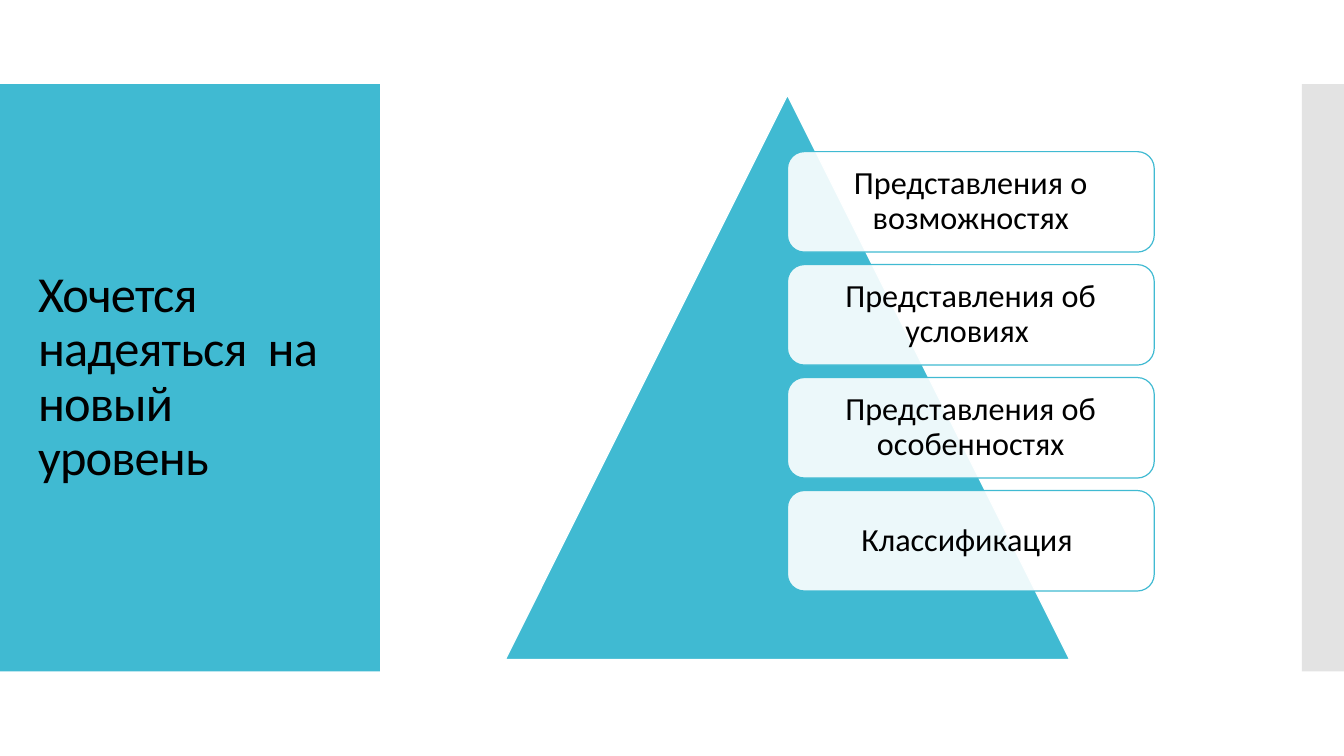
import pptx
import pptx.dml.color
import pptx.enum.shapes
import pptx.enum.text
import pptx.oxml.ns
import pptx.util
from lxml import etree

Pt = pptx.util.Pt
SHAPES = pptx.enum.shapes.MSO_SHAPE
TEAL, WHITE, GRAY, BLACK = "40BAD2", "FFFFFF", "C8C8C8", "000000"
IDEAS = [
    "Представления о возможностях",
    "Представления об условиях ",
    "Представления об особенностях",
    "Классификация ",
]


def color(hex_value):
    """Turn a hex string into a colour."""
    return pptx.dml.color.RGBColor.from_string(hex_value)


def add_block(slide, preset, box, fill, line=None, opacity=100):
    """Add a flat preset shape in a box given as left, top, width, height."""
    block = slide.shapes.add_shape(preset, *map(Pt, box))
    block.shadow.inherit = False
    block.fill.solid()
    block.fill.fore_color.rgb = color(fill)
    if opacity < 100:
        tint = block.element.spPr.find(".//" + pptx.oxml.ns.qn("a:srgbClr"))
        etree.SubElement(tint, pptx.oxml.ns.qn("a:alpha"), val=str(opacity * 1000))
    if line:
        block.line.color.rgb = color(line)
        block.line.width = Pt(0.85)
    else:
        block.line.fill.background()
    return block


def write(shape, text, size, align):
    """Set one vertically centred paragraph and return it."""
    frame = shape.text_frame
    frame.text = text
    frame.word_wrap = True
    frame.auto_size = pptx.enum.text.MSO_AUTO_SIZE.NONE
    frame.vertical_anchor = pptx.enum.text.MSO_ANCHOR.MIDDLE
    paragraph = frame.paragraphs[0]
    paragraph.alignment = align
    paragraph.line_spacing = 0.9
    paragraph.font.name = "Calibri"
    paragraph.font.size = Pt(size)
    paragraph.font.color.rgb = color(BLACK)
    return paragraph


def add_title_panel(slide, box):
    """Place the title on a coloured panel."""
    left, top, width, height = box
    title = slide.shapes.title
    panel = add_block(slide, SHAPES.RECTANGLE, box, TEAL)
    title.element.addprevious(panel.element)
    title.left, title.top = Pt(left + 20), Pt(top + 28.8)
    title.width, title.height = Pt(width - 39.6), Pt(height - 57.6)
    heading = write(title, "Хочется надеяться  на новый  уровень", 36,
                    pptx.enum.text.PP_ALIGN.LEFT)
    heading.runs[0].font._element.set("spc", "-60")


def add_pyramid(slide, box):
    """Draw the triangle with the idea cards stacked from its middle."""
    left, top, width, height = box
    add_block(slide, SHAPES.ISOSCELES_TRIANGLE, box, TEAL, WHITE)
    card_height = height * 0.178
    pitch = card_height * 1.125
    for index, idea in enumerate(IDEAS):
        card_box = (left + width / 2, top + height * 0.1 + index * pitch,
                    width * 0.65, card_height)
        card = add_block(slide, SHAPES.ROUNDED_RECTANGLE, card_box, WHITE, TEAL, 90)
        write(card, idea, 23, pptx.enum.text.PP_ALIGN.CENTER)


def main():
    """Build and save the slide."""
    deck = pptx.Presentation()
    deck.slide_width, deck.slide_height = Pt(960), Pt(540)
    slide = deck.slides.add_slide(deck.slide_layouts[5])
    add_title_panel(slide, (0, 60, 271.3, 419.5))
    add_block(slide, SHAPES.RECTANGLE, (930, 60, 30, 419.5), GRAY, opacity=50)
    add_pyramid(slide, (361, 68, 403, 403))
    deck.save("out.pptx")


if __name__ == "__main__":
    main()
